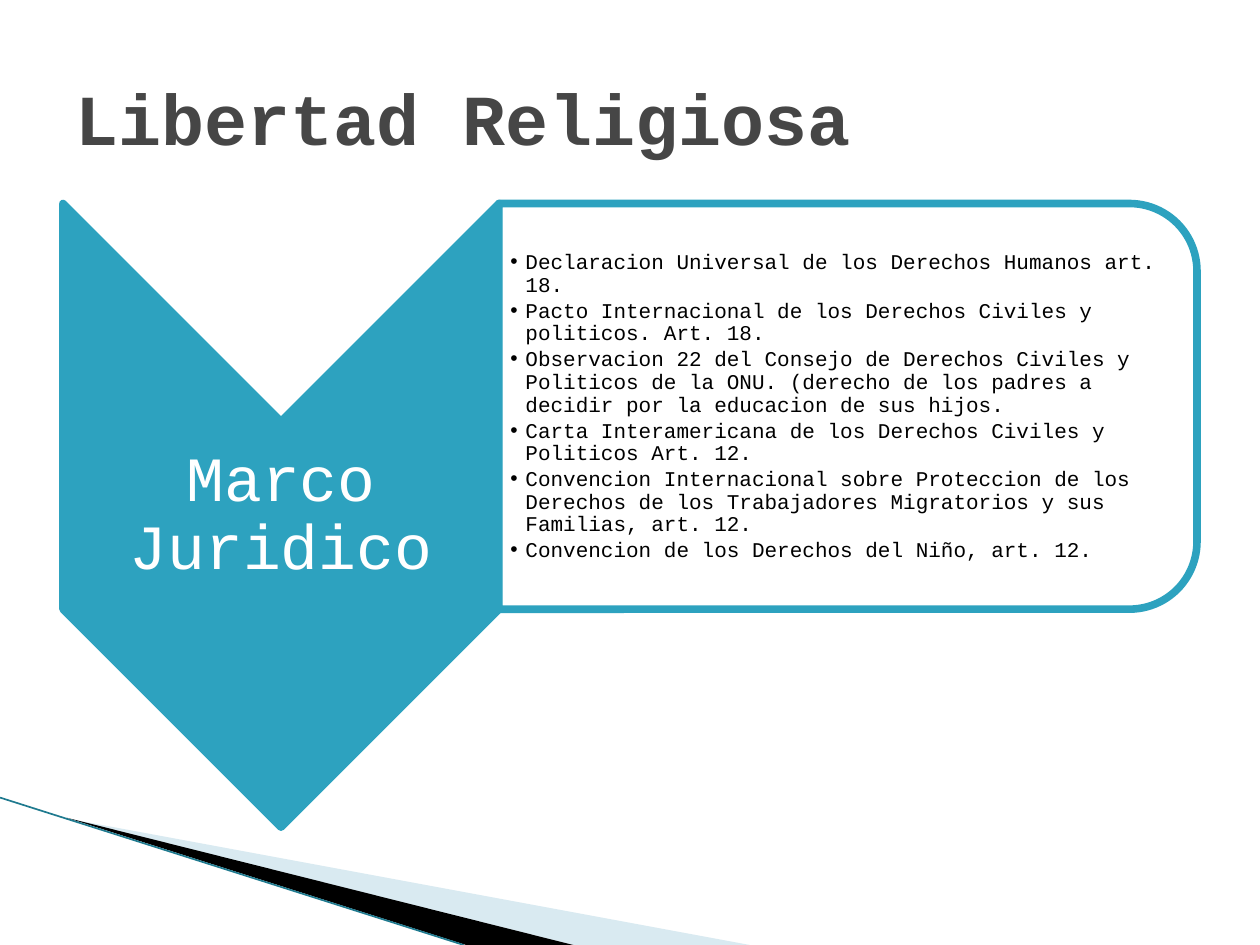
from dataclasses import dataclass

from lxml import etree
from pptx import Presentation
from pptx import util as u
from pptx.dml.color import RGBColor
from pptx.enum import shapes, text
from pptx.oxml.ns import qn


@dataclass(frozen=True)
class Theme:
    font: str = "Courier New"
    accent: str = "2DA2BF"
    title: str = "464646"
    dark: str = "000000"
    light: str = "FFFFFF"
    pale: str = "A0CBDC"
    edge: str = "1F7A8F"
    title_size: float = 41
    label_size: float = 36
    list_size: float = 12
    outline: float = 4.33
    hairline: float = 0.95


THEME = Theme()
COLUMNS, ROWS = 20, 15
CELL = u.Inches(0.5)
CHEVRON = (1, 3.23, 6.92, 9.9)
PANEL = (7.92, 3.23, 11.08, 6.44)
LABEL = (1, 6.7, 6.92, 2.96)
LIST = (7.92, 3.56, 10.76, 5.8)
TITLE = (1, 0.6, 18, 2.5)
SWEEPS = [
    ([(1.1, 13), (11.9, 15), (9.1, 15)], THEME.pale, 40),
    ([(1.06, 12.98), (9.1, 15), (7.4, 15)], THEME.dark, 100),
]
EDGE = ((0, 12.66), (7.36, 15))
SOURCES = [
    "Declaracion Universal de los Derechos Humanos art. 18.",
    "Pacto Internacional de los Derechos Civiles y politicos. Art. 18.",
    "Observacion 22 del Consejo de Derechos Civiles y Politicos de la ONU. "
    "(derecho de los padres a decidir por la educacion de sus hijos.",
    "Carta Interamericana de los Derechos Civiles y Politicos Art. 12.",
    "Convencion Internacional sobre Proteccion de los Derechos de los "
    "Trabajadores Migratorios y sus Familias, art. 12.",
    "Convencion de los Derechos del Niño, art. 12.",
]


def grid(*cells):
    return [round(cell * CELL) for cell in cells]


def paint(shape, color, opacity=100, outline=None):
    shape.shadow.inherit = False
    shape.fill.solid()
    shape.fill.fore_color.rgb = RGBColor.from_string(color)
    if opacity < 100:
        fill = shape.fill._xPr.find(qn("a:solidFill"))
        etree.SubElement(fill[0], qn("a:alpha"), val=str(opacity * 1000))
    if outline:
        shape.line.color.rgb = RGBColor.from_string(outline)
        shape.line.width = u.Pt(THEME.outline)
    else:
        shape.line.fill.background()


def add_sweep(page, points, color, opacity):
    start, *rest = [grid(*point) for point in points]
    builder = page.shapes.build_freeform(*start)
    builder.add_line_segments(rest)
    paint(builder.convert_to_shape(), color, opacity)


def add_edge(page, start, end):
    line = page.shapes.add_connector(
        shapes.MSO_CONNECTOR.STRAIGHT, *grid(*start), *grid(*end))
    line.line.color.rgb = RGBColor.from_string(THEME.edge)
    line.line.width = u.Pt(THEME.hairline)
    etree.SubElement(line._element.spPr, qn("a:effectLst"))


def add_turned(page, kind, frame, color, opacity=100):
    left, top, width, height = frame
    shift = (width - height) / 2
    shape = page.shapes.add_shape(
        kind, *grid(left + shift, top - shift, height, width))
    shape.rotation = 90
    paint(shape, color, opacity, THEME.accent)


def write(box, lines, *, frame, size, color, bold=False, align=text.PP_ALIGN.LEFT,
          margins=(0.1, 0.05, 0.1, 0.05), spacing=1.0, after=0, hang=None):
    box.left, box.top, box.width, box.height = grid(*frame)
    body = box.text_frame
    body.word_wrap = True
    body.auto_size = text.MSO_AUTO_SIZE.NONE
    body.vertical_anchor = text.MSO_ANCHOR.MIDDLE
    (body.margin_left, body.margin_top,
     body.margin_right, body.margin_bottom) = map(u.Inches, margins)
    for index, line in enumerate(lines):
        para = body.add_paragraph() if index else body.paragraphs[0]
        if hang:
            properties = para._p.get_or_add_pPr()
            properties.set("marL", str(u.Inches(hang)))
            properties.set("indent", str(-u.Inches(hang)))
        para.alignment = align
        para.line_spacing = spacing
        para.space_before = u.Pt(0)
        para.space_after = u.Pt(after)
        span = para.add_run()
        span.text = line
        span.font.name = THEME.font
        span.font.size = u.Pt(size)
        span.font.bold = bold
        span.font.color.rgb = RGBColor.from_string(color)


def bring_to_front(shape):
    shape._element.getparent().append(shape._element)


def main():
    deck = Presentation()
    deck.slide_width, deck.slide_height = grid(COLUMNS, ROWS)
    page = deck.slides.add_slide(deck.slide_layouts[1])
    title, listing = page.placeholders

    for points, color, opacity in SWEEPS:
        add_sweep(page, points, color, opacity)
    add_edge(page, *EDGE)

    add_turned(page, shapes.MSO_SHAPE.CHEVRON, CHEVRON, THEME.accent)
    label = page.shapes.add_textbox(*grid(*LABEL))
    write(label, ["Marco Juridico"], frame=LABEL, size=THEME.label_size,
          color=THEME.light, align=text.PP_ALIGN.CENTER,
          margins=(0.03,) * 4, spacing=0.9)

    add_turned(page, shapes.MSO_SHAPE.ROUND_2_SAME_RECTANGLE, PANEL, THEME.light, 90)
    write(listing, SOURCES, frame=LIST, size=THEME.list_size, color=THEME.dark,
          margins=(0.09, 0.01, 0.01, 0.01), spacing=0.9, after=1.8, hang=0.12)
    bring_to_front(listing)

    write(title, ["Libertad Religiosa"], frame=TITLE, size=THEME.title_size,
          color=THEME.title, bold=True)
    bring_to_front(title)
    deck.save("out.pptx")


if __name__ == "__main__":
    main()
